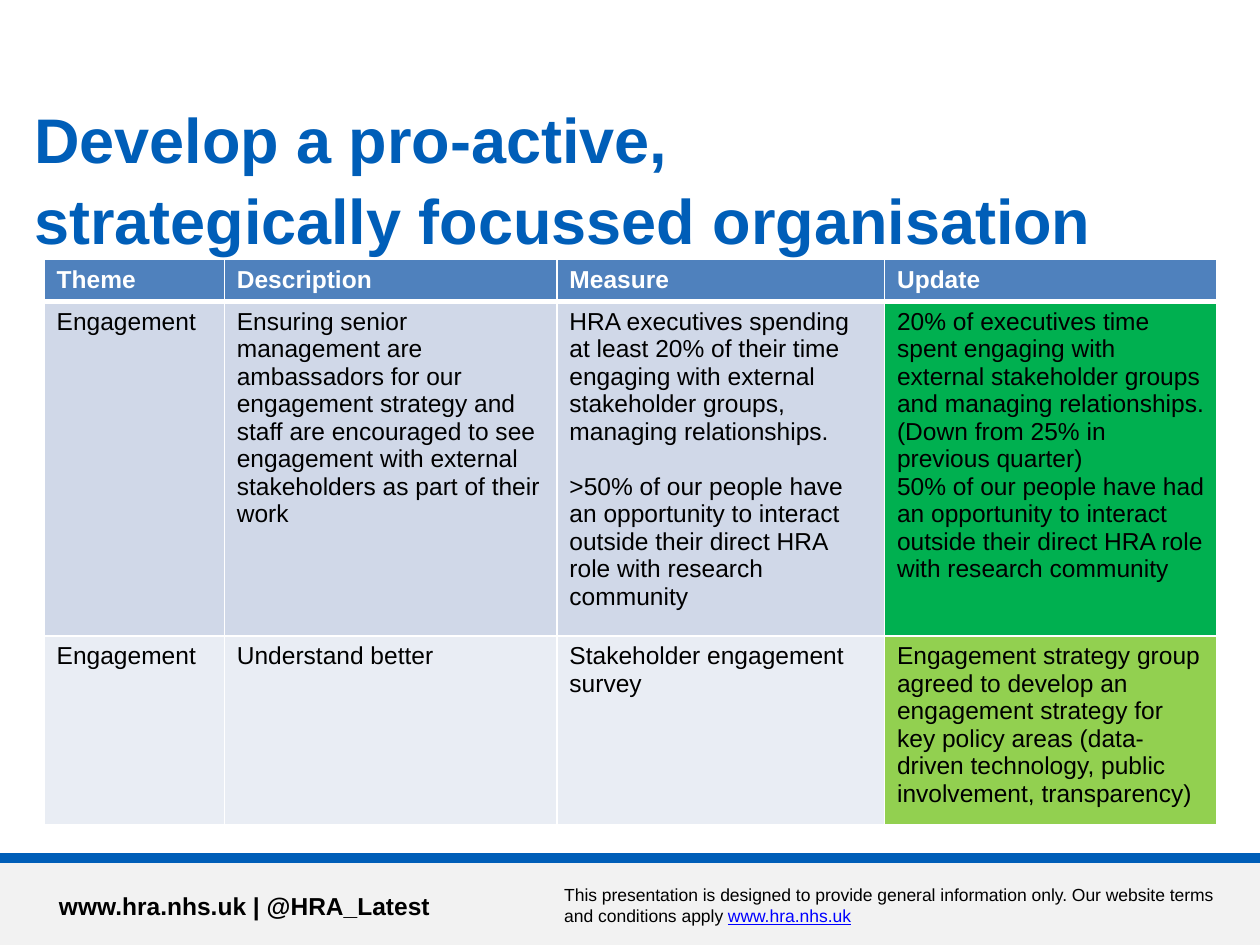
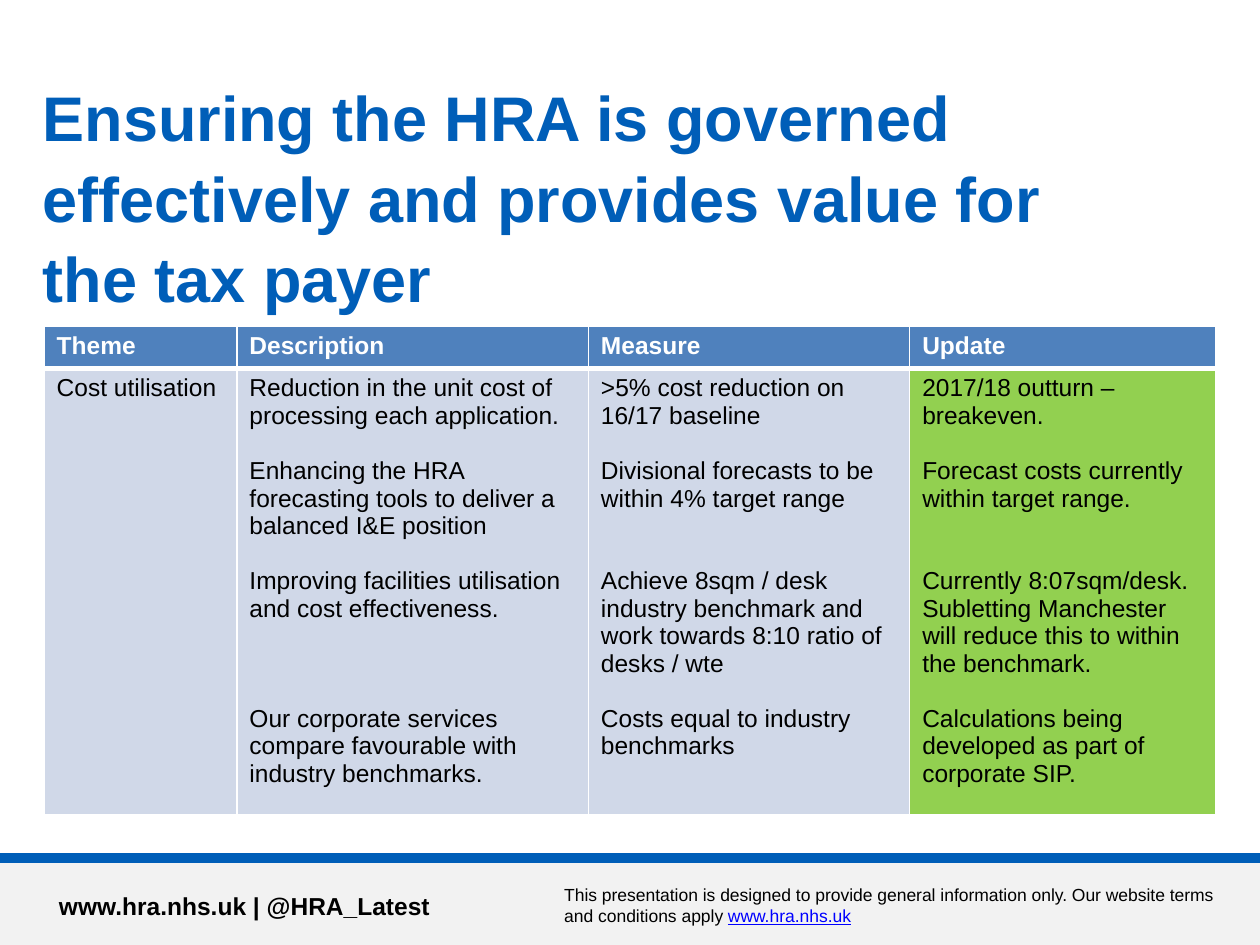
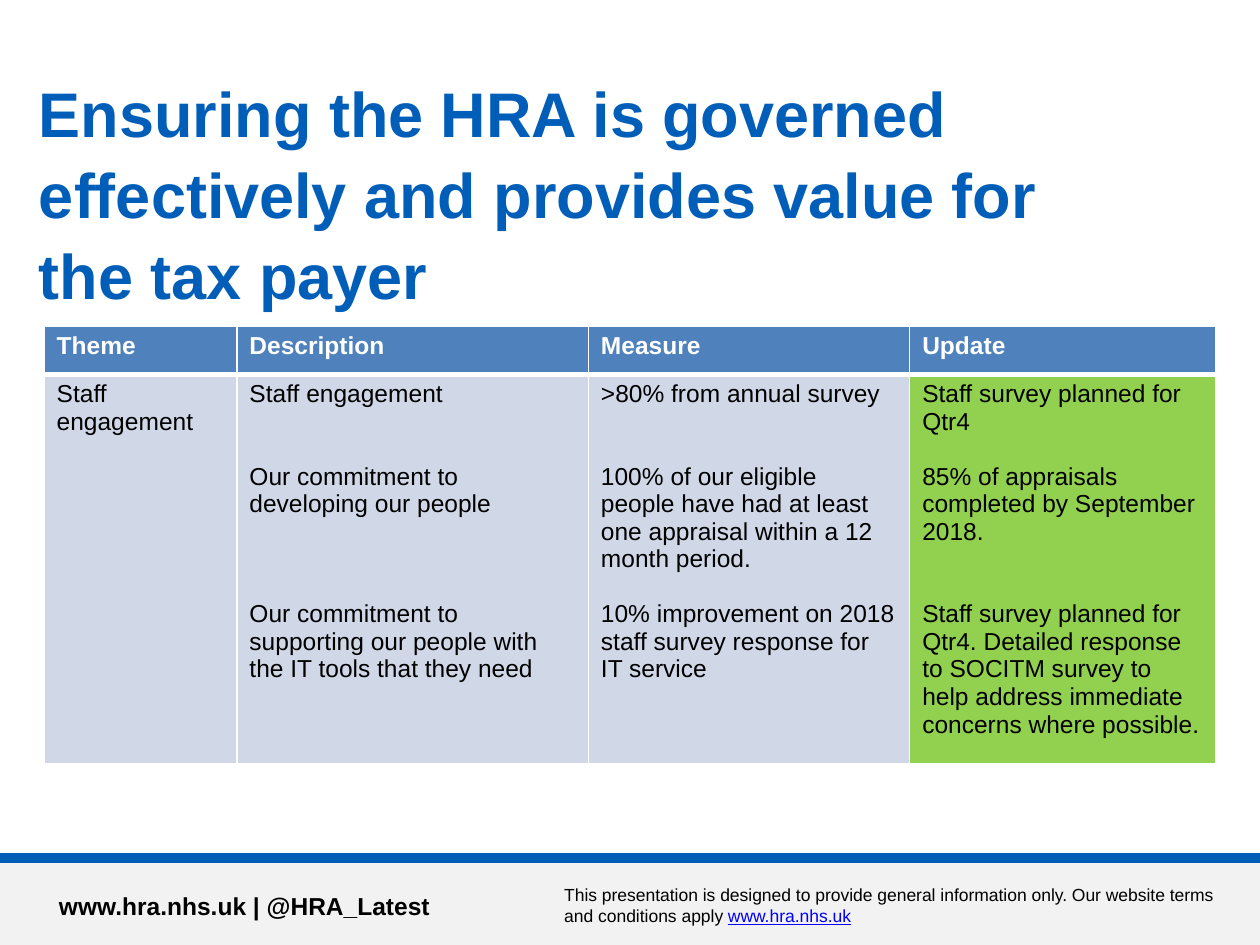
"""Build three performance update slides with a shared title, table and footer style."""
import dataclasses

import lxml.etree
import pptx
import pptx.dml.color
import pptx.enum.shapes
import pptx.enum.text
import pptx.oxml.ns
import pptx.util

Inches = pptx.util.Inches
Pt = pptx.util.Pt


@dataclasses.dataclass(frozen=True)
class Theme:
    """Colours as hex strings, sizes in points."""
    font: str = "Arial"
    blue: str = "005EB8"
    black: str = "000000"
    white: str = "FFFFFF"
    link: str = "0000FF"
    footer: str = "F2F2F2"
    header: str = "4F81BD"
    bands: tuple = ("D0D8E8", "E9EDF4")
    achieved: str = "00B050"
    on_track: str = "92D050"
    title_size: int = 36
    body_size: int = 14
    note_size: int = 10
    body_line: float = 15.7
    title_spacing: float = 1.07
    thin: int = 1
    thick: int = 3
    rule: int = 6


THEME = Theme()
HEADINGS = ("Theme", "Description", "Measure", "Update")
TABLE_LEFT = 0.35
GOVERNANCE_TITLE = ("Ensuring the HRA is governed", "effectively and provides value for the tax payer")
GOVERNANCE_COLUMNS = (1.53, 2.79, 2.55, 2.43)


def colour(code):
    """Return the colour for a hex string."""
    return pptx.dml.color.RGBColor.from_string(code)


def add_span(para, text, size, code, bold=False, underline=False):
    """Add one styled run to a paragraph."""
    span = para.add_run()
    span.text = text
    span.font.name = THEME.font
    span.font.size = Pt(size)
    span.font.color.rgb = colour(code)
    span.font.bold = bold
    span.font.underline = underline


def add_box(page, left, top, width, height):
    """Add a wrapping text box and return its text frame."""
    frame = page.shapes.add_textbox(Inches(left), Inches(top), Inches(width), Inches(height)).text_frame
    frame.word_wrap = True
    return frame


def add_title(page, lines, left, top, width):
    """Add the slide title, with a line break between its lines."""
    frame = add_box(page, left, top, width, 0.74)
    frame.margin_left = Inches(0.08)
    frame.margin_top = Inches(0.07)
    para = frame.paragraphs[0]
    para.line_spacing = THEME.title_spacing
    for index, line in enumerate(lines):
        if index:
            para.add_line_break()
        add_span(para, line, THEME.title_size, THEME.blue, bold=True)


def add_footer(page):
    """Add the footer band, its rule and both footer texts."""
    top = Inches(6.81)
    band = page.shapes.add_shape(pptx.enum.shapes.MSO_SHAPE.RECTANGLE, 0, top, Inches(10), Inches(0.69))
    band.shadow.inherit = False
    band.fill.solid()
    band.fill.fore_color.rgb = colour(THEME.footer)
    band.line.fill.background()

    rule = page.shapes.add_connector(pptx.enum.shapes.MSO_CONNECTOR.STRAIGHT, 0, top, Inches(10), top)
    rule.line.color.rgb = colour(THEME.blue)
    rule.line.width = Pt(THEME.rule)
    lxml.etree.SubElement(rule._element.spPr, pptx.oxml.ns.qn("a:effectLst"))

    contact = add_box(page, 0.37, 7.02, 5.84, 0.4).paragraphs[0]
    add_span(contact, "www.hra.nhs.uk | @HRA_Latest", THEME.body_size, THEME.black, bold=True)
    notice = add_box(page, 4.38, 6.97, 5.4, 0.5).paragraphs[0]
    add_span(notice, "This presentation is designed to provide general information only. "
             "Our website terms and conditions apply ", THEME.note_size, THEME.black)
    add_span(notice, "www.hra.nhs.uk", THEME.note_size, THEME.link, underline=True)


def set_borders(cell, top, bottom):
    """Give a cell white borders with the given top and bottom widths."""
    widths = {"lnL": THEME.thin, "lnR": THEME.thin, "lnT": top, "lnB": bottom}
    properties = cell._tc.get_or_add_tcPr()
    for tag, width in widths.items():
        border = lxml.etree.SubElement(properties, pptx.oxml.ns.qn("a:" + tag), w=str(Pt(width)))
        fill = lxml.etree.SubElement(border, pptx.oxml.ns.qn("a:solidFill"))
        lxml.etree.SubElement(fill, pptx.oxml.ns.qn("a:srgbClr"), val=THEME.white)


def fill_cell(cell, entries, fill, code, bold=False):
    """Write (lines of space before, text) entries into a filled cell."""
    cell.fill.solid()
    cell.fill.fore_color.rgb = colour(fill)
    frame = cell.text_frame
    for index, (gap, text) in enumerate(entries):
        para = frame.add_paragraph() if index else frame.paragraphs[0]
        if gap:
            para.space_before = Pt(gap * THEME.body_line)
        add_span(para, text, THEME.body_size, code, bold)


def add_update_table(page, top, columns, heights, rows):
    """Add a table of (status colour, cells) rows beneath the shared headings."""
    table = page.shapes.add_table(len(rows) + 1, len(columns), Inches(TABLE_LEFT), Inches(top),
                                  Inches(sum(columns)), Inches(sum(heights))).table
    for column, width in zip(table.columns, columns):
        column.width = Inches(width)
    for row, height in zip(table.rows, heights):
        row.height = Inches(height)
    for index, heading in enumerate(HEADINGS):
        cell = table.cell(0, index)
        set_borders(cell, THEME.thin, THEME.thick)
        fill_cell(cell, [(0, heading)], THEME.header, THEME.white, bold=True)
    for number, (status, cells) in enumerate(rows, start=1):
        band = THEME.bands[(number - 1) % 2]
        for index, entries in enumerate(cells):
            cell = table.cell(number, index)
            set_borders(cell, THEME.thick if number == 1 else THEME.thin, THEME.thin)
            fill_cell(cell, entries, status if index == len(cells) - 1 else band, THEME.black)


def add_page(deck, title, title_place, **table):
    """Add a slide with footer, title and update table."""
    page = deck.slides.add_slide(deck.slide_layouts[6])
    add_footer(page)
    add_title(page, title, *title_place)
    add_update_table(page, **table)


def main():
    """Build and save the deck."""
    deck = pptx.Presentation()
    deck.slide_width = Inches(10)
    deck.slide_height = Inches(7.5)

    engagement = [
        (THEME.achieved, [
            [(0, "Engagement")],
            [(0, "Ensuring senior management are ambassadors for our engagement strategy and staff are "
                 "encouraged to see engagement with external stakeholders as part of their work")],
            [(0, "HRA executives spending at least 20% of their time engaging with external stakeholder "
                 "groups, managing relationships."),
             (1, ">50% of our people have an opportunity to interact outside their direct HRA role with "
                 "research community")],
            [(0, "20% of executives time spent engaging with external stakeholder groups and managing "
                 "relationships. (Down from 25% in previous quarter)"),
             (0, "50% of our people have had an opportunity to interact outside their direct HRA role "
                 "with research community")],
        ]),
        (THEME.on_track, [
            [(0, "Engagement")],
            [(0, "Understand better")],
            [(0, "Stakeholder engagement survey")],
            [(0, "Engagement strategy group agreed to develop an engagement strategy for key policy areas "
                 "(data-driven technology, public involvement, transparency)")],
        ]),
    ]
    costs = [
        (THEME.on_track, [
            [(0, "Cost utilisation")],
            [(0, "Reduction in the unit cost of processing each application."),
             (1, "Enhancing the HRA forecasting tools to deliver a balanced I&E position"),
             (1, "Improving facilities utilisation and cost effectiveness."),
             (3, "Our corporate services compare favourable with industry benchmarks.")],
            [(0, ">5% cost reduction on 16/17 baseline"),
             (1, "Divisional forecasts to be within 4% target range"),
             (2, "Achieve 8sqm / desk industry benchmark and work towards 8:10 ratio of desks / wte"),
             (1, "Costs equal to industry benchmarks")],
            [(0, "2017/18 outturn – breakeven."),
             (1, "Forecast costs currently within target range."),
             (2, "Currently 8:07sqm/desk. Subletting Manchester will reduce this to within the benchmark."),
             (1, "Calculations being developed as part of corporate SIP.")],
        ]),
    ]
    staff = [
        (THEME.on_track, [
            [(0, "Staff engagement")],
            [(0, "Staff engagement"),
             (2, "Our commitment to developing our people"),
             (3, "Our commitment to supporting our people with the IT tools that they need")],
            [(0, ">80% from annual survey"),
             (2, "100% of our eligible people have had at least one appraisal within a 12 month period."),
             (1, "10% improvement on 2018 staff survey response for IT service")],
            [(0, "Staff survey planned for Qtr4"),
             (1, "85% of appraisals completed by September 2018."),
             (2, "Staff survey planned for Qtr4. Detailed response to SOCITM survey to help address "
                 "immediate concerns where possible.")],
        ]),
    ]

    add_page(deck, ("Develop a pro-active, ", "strategically focussed organisation"), (0.19, 0.69, 8.81),
             top=2.06, columns=(1.43, 2.64, 2.6, 2.64), heights=(0.32, 2.5, 1.41), rows=engagement)
    add_page(deck, GOVERNANCE_TITLE, (0.26, 0.51, 8.5),
             top=2.59, columns=GOVERNANCE_COLUMNS, heights=(0.32, 3.37), rows=costs)
    add_page(deck, GOVERNANCE_TITLE, (0.23, 0.48, 8.5),
             top=2.59, columns=GOVERNANCE_COLUMNS, heights=(0.38, 2.93), rows=staff)
    deck.save("out.pptx")


if __name__ == "__main__":
    main()
